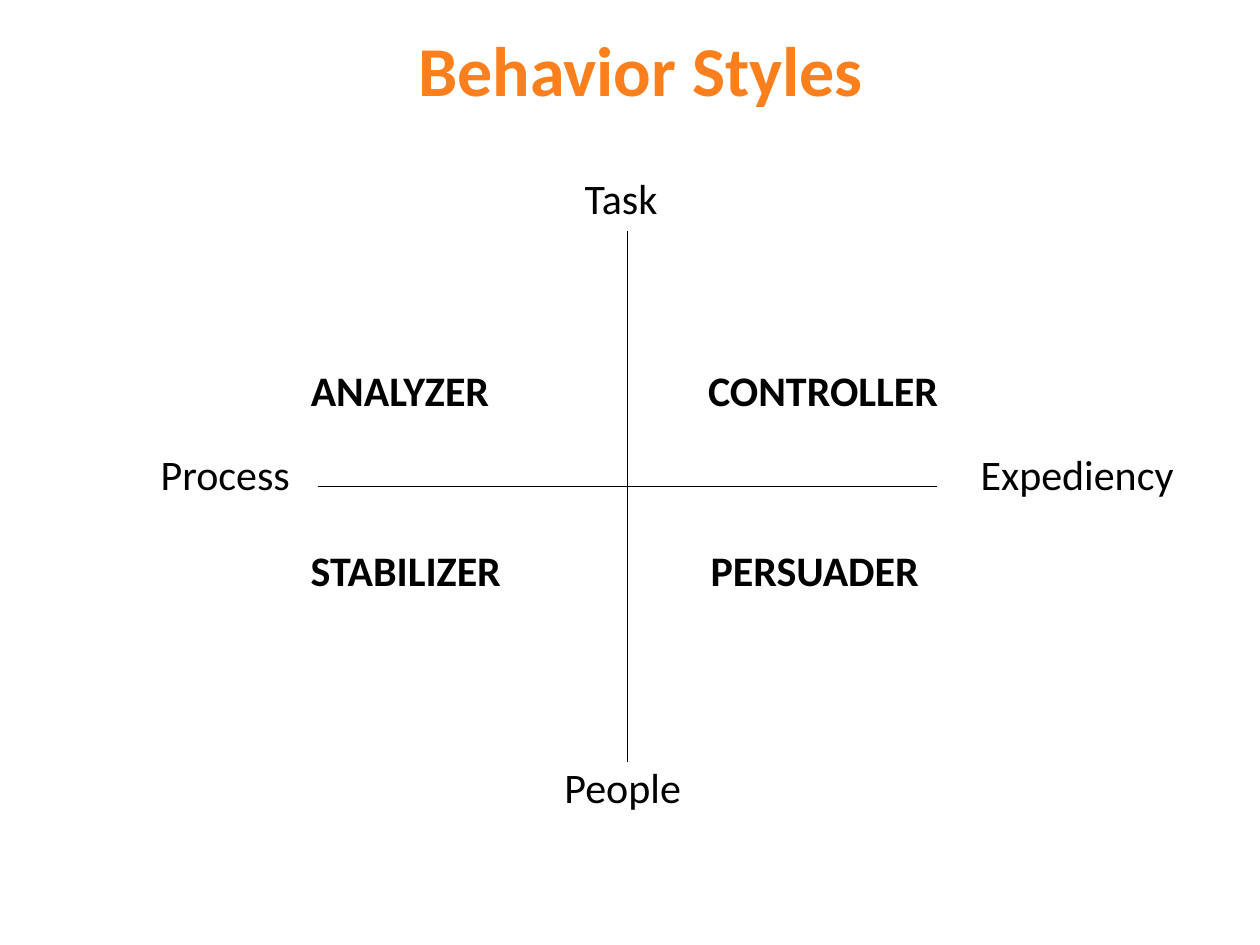
from dataclasses import dataclass

from lxml import etree
from pptx import Presentation
from pptx.dml.color import RGBColor
from pptx.enum.shapes import MSO_CONNECTOR
from pptx.enum.text import MSO_ANCHOR, MSO_AUTO_SIZE, PP_ALIGN
from pptx.oxml.ns import qn
from pptx.util import Pt

STRAIGHT = MSO_CONNECTOR.STRAIGHT
MIDDLE = MSO_ANCHOR.MIDDLE
FIT_SHAPE = MSO_AUTO_SIZE.SHAPE_TO_FIT_TEXT
LEFT, CENTER = PP_ALIGN.LEFT, PP_ALIGN.CENTER


@dataclass(frozen=True)
class Theme:
    font: str = "Calibri"
    title_color: RGBColor = RGBColor(0xFC, 0x7F, 0x1D)
    ink: RGBColor = RGBColor(0, 0, 0)
    title_size: int = 40
    label_size: int = 24
    axis_width: float = 0.75


THEME = Theme()
TITLE = "Behavior Styles"
TITLE_BOX = (78, 12, 576, 54)
LABEL_HEIGHT = 36
CENTER_X, CENTER_Y = 358.5, 278
AXIS_TOP, AXIS_BOTTOM = 132, 435.5
AXIS_HALF_WIDTH = 177
POLE_Y, UPPER_Y, LOWER_Y = 253, 204.5, 307.5

AXES = [
    (CENTER_X, AXIS_TOP, CENTER_X, AXIS_BOTTOM),
    (CENTER_X - AXIS_HALF_WIDTH, CENTER_Y, CENTER_X + AXIS_HALF_WIDTH, CENTER_Y),
]
# text, left, top, width, alignment, bold
LABELS = [
    ("Task", 327, 95, 66, LEFT, False),
    ("People", 315.5, 431.5, 89, LEFT, False),
    ("Process", 78, POLE_Y, 101.5, CENTER, False),
    ("Expediency", 546, POLE_Y, 139, CENTER, False),
    ("ANALYZER", 170.5, UPPER_Y, 145.5, LEFT, True),
    ("CONTROLLER", 397.5, UPPER_Y, 181.5, LEFT, True),
    ("STABILIZER", 170.5, LOWER_Y, 155.5, LEFT, True),
    ("PERSUADER", 399, LOWER_Y, 165.5, LEFT, True),
]


def write(frame, text, size, color, bold, align):
    frame.text = text
    paragraph = frame.paragraphs[0]
    paragraph.alignment = align
    font = paragraph.font
    font.name, font.size, font.bold = THEME.font, Pt(size), bold
    font.color.rgb = color


def add_title(slide):
    title = slide.shapes.title
    title.left, title.top, title.width, title.height = map(Pt, TITLE_BOX)
    title.text_frame.vertical_anchor = MIDDLE
    write(title.text_frame, TITLE, THEME.title_size, THEME.title_color, True, CENTER)


def add_axis(slide, ends):
    axis = slide.shapes.add_connector(STRAIGHT, *map(Pt, ends))
    axis.line.color.rgb = THEME.ink
    axis.line.width = Pt(THEME.axis_width)
    etree.SubElement(axis._element.spPr, qn("a:effectLst"))


def add_label(slide, text, left, top, width, align, bold):
    label = slide.shapes.add_textbox(*map(Pt, (left, top, width, LABEL_HEIGHT)))
    label.text_frame.word_wrap = True
    label.text_frame.auto_size = FIT_SHAPE
    write(label.text_frame, text, THEME.label_size, THEME.ink, bold, align)


def main():
    deck = Presentation()
    deck.slide_width, deck.slide_height = Pt(720), Pt(540)
    slide = deck.slides.add_slide(deck.slide_layouts[5])
    add_title(slide)
    for ends in AXES:
        add_axis(slide, ends)
    for label in LABELS:
        add_label(slide, *label)
    deck.save("out.pptx")


if __name__ == "__main__":
    main()
